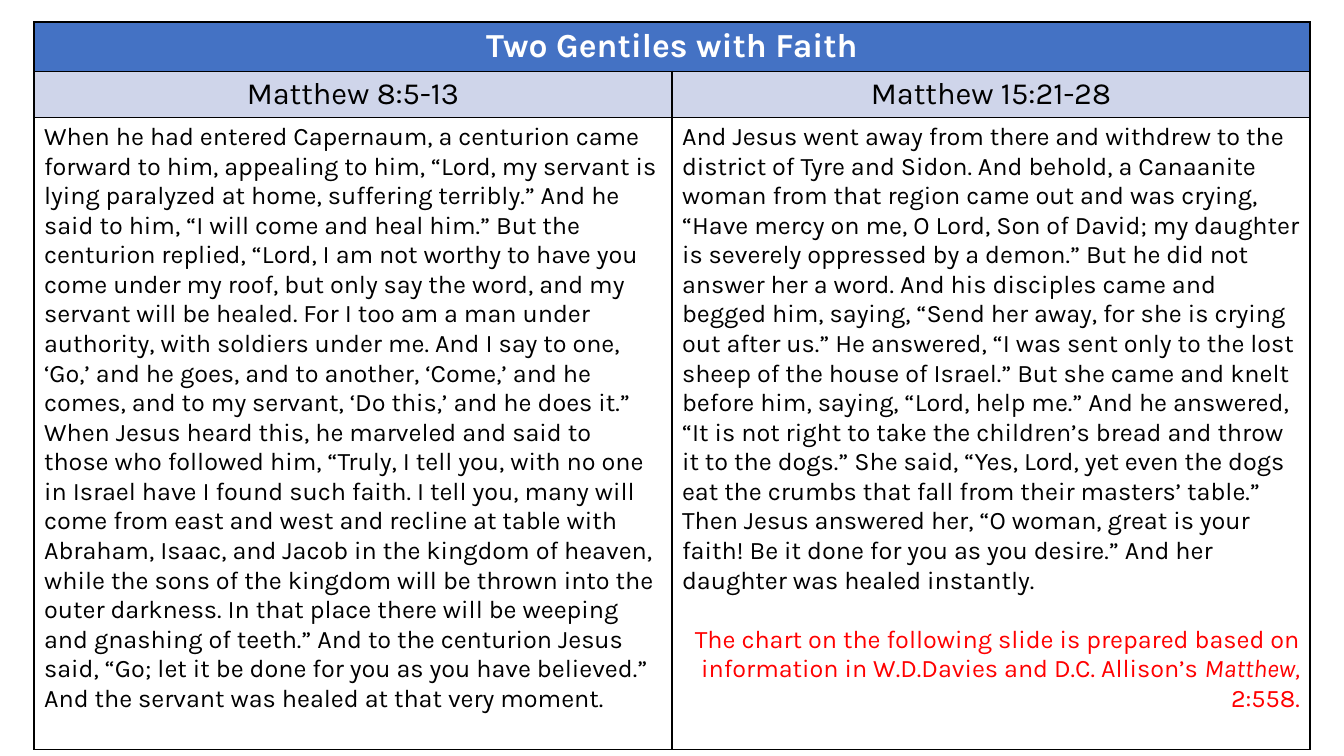
from dataclasses import dataclass

from lxml import etree
from pptx import Presentation
from pptx.dml.color import RGBColor
from pptx.enum import text
from pptx.oxml import ns
from pptx.util import Pt

PX = 9071  # EMU in one px
SLIDE = (1344, 756)
TABLE_AT = (34, 22)
COLUMNS = [638, 638]
ROWS = [49, 46, 632]

TITLE = "Two Gentiles with Faith"
# Each passage is a heading and its sentences, which run on as one paragraph.
PASSAGES = [
    ("Matthew 8:5-13", [
        "When he had entered Capernaum, a centurion came forward to him, appealing to him, "
        "“Lord, my servant is lying paralyzed at home, suffering terribly.”",
        "And he said to him, “I will come and heal him.”",
        "But the centurion replied, “Lord, I am not worthy to have you come under my roof, "
        "but only say the word, and my servant will be healed.",
        "For I too am a man under authority, with soldiers under me.",
        "And I say to one, ‘Go,’ and he goes, and to another, ‘Come,’ and he comes, "
        "and to my servant, ‘Do this,’ and he does it.”",
        "When Jesus heard this, he marveled and said to those who followed him, "
        "“Truly, I tell you, with no one in Israel have I found such faith.",
        "I tell you, many will come from east and west and recline at table with Abraham, "
        "Isaac, and Jacob in the kingdom of heaven, while the sons of the kingdom will be "
        "thrown into the outer darkness.",
        "In that place there will be weeping and gnashing of teeth.”",
        "And to the centurion Jesus said, “Go; let it be done for you as you have believed.”",
        "And the servant was healed at that very moment.",
    ]),
    ("Matthew 15:21-28", [
        "And Jesus went away from there and withdrew to the district of Tyre and Sidon.",
        "And behold, a Canaanite woman from that region came out and was crying, “Have mercy "
        "on me, O Lord, Son of David; my daughter is severely oppressed by a demon.”",
        "But he did not answer her a word.",
        "And his disciples came and begged him, saying, “Send her away, for she is crying out "
        "after us.”",
        "He answered, “I was sent only to the lost sheep of the house of Israel.”",
        "But she came and knelt before him, saying, “Lord, help me.”",
        "And he answered, “It is not right to take the children’s bread and throw it to the "
        "dogs.”",
        "She said, “Yes, Lord, yet even the dogs eat the crumbs that fall from their masters’ "
        "table.”",
        "Then Jesus answered her, “O woman, great is your faith!",
        "Be it done for you as you desire.”",
        "And her daughter was healed instantly.",
    ]),
]
SOURCE_NOTE = [
    ("The chart on the following slide is prepared based on information in "
     "W.D.Davies and D.C. Allison’s ", False),
    ("Matthew, ", True),
    ("2:558.", False),
]


@dataclass(frozen=True)
class Theme:
    font: str = "Karla"
    title_size: int = 24
    heading_size: int = 22
    body_size: int = 18
    note_gap: int = 21
    border: int = 1
    black: str = "000000"
    white: str = "FFFFFF"
    blue: str = "4472C4"
    pale: str = "CFD5EA"
    red: str = "FF0000"


THEME = Theme()
ALIGN = text.PP_ALIGN


def add_run(p, words, size, color, bold=False, italic=False):
    r = p.add_run()
    r.text = words
    looks = {"name": THEME.font, "size": Pt(size), "bold": bold, "italic": italic}
    for name, value in looks.items():
        setattr(r.font, name, value)
    r.font.color.rgb = RGBColor.from_string(color)


def style_cell(cell, fill):
    """Border all four sides, then fill; the schema wants the lines first."""
    tc_pr = cell._tc.get_or_add_tcPr()
    for side in ("a:lnL", "a:lnR", "a:lnT", "a:lnB"):
        line = etree.SubElement(tc_pr, ns.qn(side), w=str(Pt(THEME.border)))
        solid = etree.SubElement(line, ns.qn("a:solidFill"))
        etree.SubElement(solid, ns.qn("a:srgbClr"), val=THEME.black)
    cell.fill.solid()
    cell.fill.fore_color.rgb = RGBColor.from_string(fill)


def write_cell(cell, words, size, color, align, bold=False):
    p = cell.text_frame.paragraphs[0]
    p.alignment = align
    add_run(p, words, size, color, bold)


def add_source_note(cell):
    p = cell.text_frame.add_paragraph()
    p.alignment = ALIGN.RIGHT
    p.space_before = Pt(THEME.note_gap)
    for words, italic in SOURCE_NOTE:
        add_run(p, words, THEME.body_size, THEME.red, italic=italic)


def add_passage_table(s):
    box = [v * PX for v in (*TABLE_AT, sum(COLUMNS), sum(ROWS))]
    table = s.shapes.add_table(len(ROWS), len(COLUMNS), *box).table
    table.first_row = table.horz_banding = False
    for column, width in zip(table.columns, COLUMNS):
        column.width = width * PX
    for i, fill in enumerate((THEME.blue, THEME.pale, THEME.white)):
        table.rows[i].height = ROWS[i] * PX
        for cell in table.rows[i].cells:
            style_cell(cell, fill)

    title = table.cell(0, 0)
    title.merge(table.cell(0, len(COLUMNS) - 1))
    write_cell(title, TITLE, THEME.title_size, THEME.white, ALIGN.CENTER, bold=True)
    for i, (heading, sentences) in enumerate(PASSAGES):
        write_cell(table.cell(1, i), heading, THEME.heading_size, THEME.black, ALIGN.CENTER)
        write_cell(table.cell(2, i), " ".join(sentences), THEME.body_size, THEME.black,
                   ALIGN.LEFT)
    add_source_note(table.cell(2, len(COLUMNS) - 1))


def main():
    prs = Presentation()
    prs.slide_width, prs.slide_height = (v * PX for v in SLIDE)
    s = prs.slides.add_slide(prs.slide_layouts.get_by_name("Blank"))
    add_passage_table(s)
    prs.save("out.pptx")


if __name__ == "__main__":
    main()
